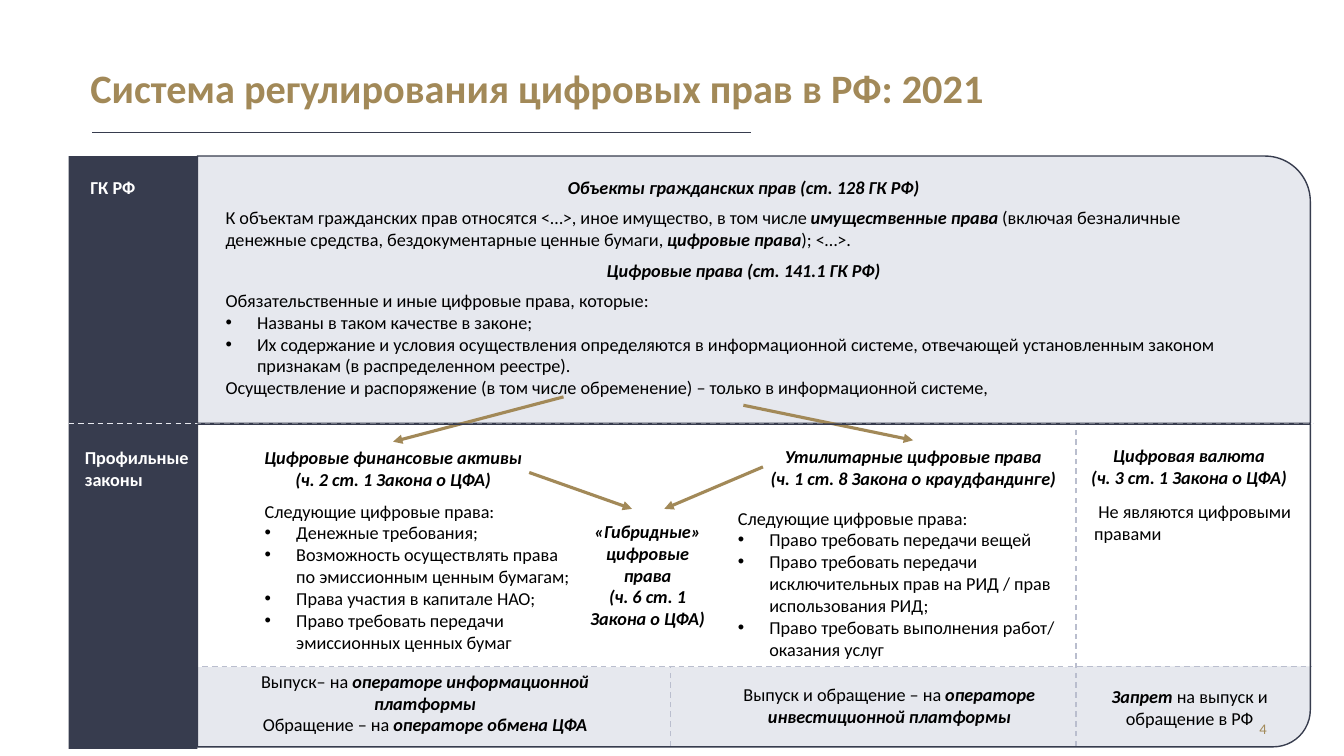
import pptx
import pptx.util
import pptx.dml.color
import pptx.enum.dml
import pptx.enum.shapes
import pptx.enum.text
import pptx.oxml.ns
from dataclasses import dataclass
from typing import Optional
from lxml import etree

Pt = pptx.util.Pt
Color = pptx.dml.color.RGBColor
Shape = pptx.enum.shapes.MSO_SHAPE
Align = pptx.enum.text.PP_ALIGN
qn = pptx.oxml.ns.qn

NAVY = Color(0x37, 0x3C, 0x4E)
GOLD = Color(0xA2, 0x89, 0x58)
PALE = Color(0xE6, 0xE8, 0xEE)
GREY = Color(0xBA, 0xBE, 0xCE)
WHITE = Color(0xFF, 0xFF, 0xFF)
BLACK = Color(0, 0, 0)


@dataclass
class Panel:
    box: tuple[float, float, float, float]
    fill: Optional[Color] = None
    line: Optional[Color] = None
    curve: Optional[float] = None
    flip: bool = False


@dataclass
class Para:
    text: str
    align: Optional[Align] = None
    after: float = 0
    bullet: bool = False
    indent: float = 0


@dataclass
class Label:
    name: str
    box: tuple[float, float, float, float]
    paras: list[Para]
    size: float = 13
    color: Color = BLACK
    middle: bool = False


@dataclass
class Link:
    start: tuple[float, float]
    end: tuple[float, float]
    color: Color
    width: float = 1
    dash: bool = False
    arrow: bool = False
    source: Optional[tuple[str, int]] = None
    target: Optional[tuple[str, int]] = None


def mid(*lines: str, after: float = 0) -> list[Para]:
    return [Para(line, Align.CENTER, after) for line in lines]


def points(*lines: str) -> list[Para]:
    return [Para(line, bullet=True) for line in lines]


PANELS = [
    Panel((139.5, 476.5, 629.5, 57), PALE),
    Panel((768.5, 476, 167.5, 57.5), PALE, curve=0.5, flip=True),
    Panel((141, 111.5, 795, 191), PALE, NAVY, curve=0.17),
    Panel((49, 111.5, 92, 423.5), NAVY),
]
FRAME = Panel((141, 303, 795, 230.5), line=NAVY, curve=0.115, flip=True)

LABELS = [
    Label("title", (57.5, 50.5, 786, 24.5),
          [Para("*Система регулирования цифровых прав в РФ: 2021*")], 28.8, GOLD, True),
    Label("page", (696, 510.5, 216, 29), [Para("4", Align.RIGHT)], 10.5, GOLD),
    Label("code", (57.5, 122.5, 124.5, 23), [Para("*ГК РФ*")], color=WHITE),
    Label("laws", (53.5, 315.5, 90.5, 39), [Para("*Профильные законы*")], color=WHITE),
    Label("objects", (154, 122.5, 754, 167),
          mid("_Объекты гражданских прав (ст. 128 ГК РФ)_", after=6)
          + [Para("К объектам гражданских прав относятся <…>, иное имущество, в том числе "
                  "_имущественные права_ (включая безналичные денежные средства, "
                  "бездокументарные ценные бумаги,_ цифровые права_); <…>.", after=6)]
          + mid("_Цифровые права (ст. 141.1 ГК РФ)_", after=6)
          + [Para("Обязательственные и иные цифровые права, которые:")]
          + points("Названы в таком качестве в законе;",
                   "Их содержание и условия осуществления определяются в информационной "
                   "системе, отвечающей установленным законом признакам "
                   "(в распределенном реестре).")
          + [Para("Осуществление и распоряжение (в том числе обременение) – "
                  "только в информационной системе,")]),
    Label("assets", (159, 315.5, 243.5, 39),
          mid("_Цифровые финансовые активы_", "_(ч. 2 ст. 1 Закона о ЦФА)_")),
    Label("rights", (530.5, 314.5, 243.5, 39),
          mid("_Утилитарные цифровые права_", "_(ч. 1 ст. 8 Закона о краудфандинге)_")),
    Label("money", (762.5, 314, 173.5, 39),
          mid("_Цифровая валюта_", "_(ч. 3 ст. 1 Закона о ЦФА)_")),
    Label("uses", (520, 358.5, 254, 117.5),
          [Para("Следующие цифровые права:")]
          + points("Право требовать передачи вещей",
                   "Право требовать передачи исключительных прав на РИД / прав использования РИД;",
                   "Право требовать выполнения работ/ оказания услуг")),
    Label("claims", (182, 353.5, 233.5, 117.5),
          [Para("Следующие цифровые права:")]
          + points("Денежные требования;",
                   "Возможность осуществлять права по эмиссионным ценным бумагам;",
                   "Права участия в капитале НАО;",
                   "Право требовать передачи эмиссионных ценных бумаг")),
    Label("hybrid", (408.5, 368, 108, 85.5),
          mid("_«Гибридные» цифровые права_", "_(ч. 6 ст. 1 Закона о ЦФА)_")),
    Label("not", (774.5, 354, 162, 39),
          [Para("Не являются цифровыми правами", indent=3)]),
    Label("invest", (513.5, 484.5, 243.5, 39),
          mid("Выпуск и обращение – на _операторе инвестиционной платформы_")),
    Label("issue", (144, 475, 319, 54.5),
          mid("Выпуск– на _операторе информационной платформы_",
              "Обращение – на _операторе обмена ЦФА_")),
    Label("ban", (764, 486, 171.5, 39), mid("_Запрет_ на выпуск и обращение в РФ")),
]

LINKS = [
    Link((66, 94.5), (536.5, 94.5), NAVY, 0.5),
    Link((139, 515.5), (139, 118), NAVY, 0.5, dash=True),
    Link((49, 302.5), (938, 302.5), PALE, dash=True),
    Link((479, 533), (479, 476.5), GREY, dash=True),
    Link((768.5, 533), (768.5, 303), GREY, dash=True),
    Link((531, 289.5), (652.5, 314.5), GOLD, 2.25, arrow=True,
         source=("objects", 2), target=("rights", 0)),
    Link((402.5, 283.5), (281, 315.5), GOLD, 2.25, arrow=True, target=("assets", 0)),
    Link((545, 333.5), (474.5, 363.5), GOLD, 2.25, arrow=True),
    Link((378, 337.5), (451.5, 363.5), GOLD, 2.25, arrow=True),
    Link((144.5, 476), (936.5, 476), GREY, dash=True),
]


def draw_panel(slide, panel: Panel) -> None:
    kind = Shape.RECTANGLE if panel.curve is None else Shape.ROUND_1_RECTANGLE
    shape = slide.shapes.add_shape(kind, *map(Pt, panel.box))
    shape.shadow.inherit = False
    if panel.curve is not None:
        shape.adjustments[0] = panel.curve
    if panel.flip:
        shape._element.spPr.find(qn("a:xfrm")).set("flipV", "1")
    if panel.fill is None:
        shape.fill.background()
    else:
        shape.fill.solid()
        shape.fill.fore_color.rgb = panel.fill
    if panel.line is None:
        shape.line.fill.background()
    else:
        shape.line.color.rgb = panel.line
        shape.line.width = Pt(1)


def write_para(para, item: Para, label: Label) -> None:
    props = para._p.get_or_add_pPr()
    if item.bullet:
        props.set("marL", str(Pt(22.5)))
        props.set("indent", str(-Pt(22.5)))
        etree.SubElement(props, qn("a:buFont")).set("typeface", "Arial")
        etree.SubElement(props, qn("a:buChar")).set("char", "•")
    elif item.indent:
        props.set("indent", str(Pt(item.indent)))
    para.alignment = item.align
    para.space_after = Pt(item.after)
    font = para.font
    font.name, font.size = "Calibri", Pt(label.size)
    font.color.rgb = label.color
    mark = "*" if item.text.startswith("*") else "_"
    parts = [(i % 2 == 1, part) for i, part in enumerate(item.text.split(mark)) if part]
    for strong, part in parts:
        run = para.add_run()
        run.text = part
        target = font if len(parts) == 1 else run.font
        if strong:
            target.bold = True
            target.italic = mark == "_"


def draw_label(slide, label: Label):
    box = slide.shapes.add_textbox(*map(Pt, label.box))
    frame = box.text_frame
    frame.word_wrap = True
    if label.middle:
        frame.vertical_anchor = pptx.enum.text.MSO_ANCHOR.MIDDLE
    for i, item in enumerate(label.paras):
        write_para(frame.add_paragraph() if i else frame.paragraphs[0], item, label)
    return box


def draw_link(slide, link: Link, boxes: dict) -> None:
    line = slide.shapes.add_connector(
        pptx.enum.shapes.MSO_CONNECTOR.STRAIGHT, *map(Pt, link.start + link.end))
    if link.source:
        line.begin_connect(boxes[link.source[0]], link.source[1])
    if link.target:
        line.end_connect(boxes[link.target[0]], link.target[1])
    line.line.color.rgb = link.color
    line.line.width = Pt(link.width)
    if link.dash:
        line.line.dash_style = pptx.enum.dml.MSO_LINE.DASH
    props = line._element.spPr
    if link.arrow:
        etree.SubElement(props.find(qn("a:ln")), qn("a:tailEnd")).set("type", "triangle")
    etree.SubElement(props, qn("a:effectLst"))


def main() -> None:
    deck = pptx.Presentation()
    deck.slide_width, deck.slide_height = Pt(960), Pt(540)
    slide = deck.slides.add_slide(deck.slide_layouts[6])
    for panel in PANELS:
        draw_panel(slide, panel)
    boxes = {label.name: draw_label(slide, label) for label in LABELS}
    for link in LINKS:
        draw_link(slide, link, boxes)
    draw_panel(slide, FRAME)
    deck.save("out.pptx")


if __name__ == "__main__":
    main()
